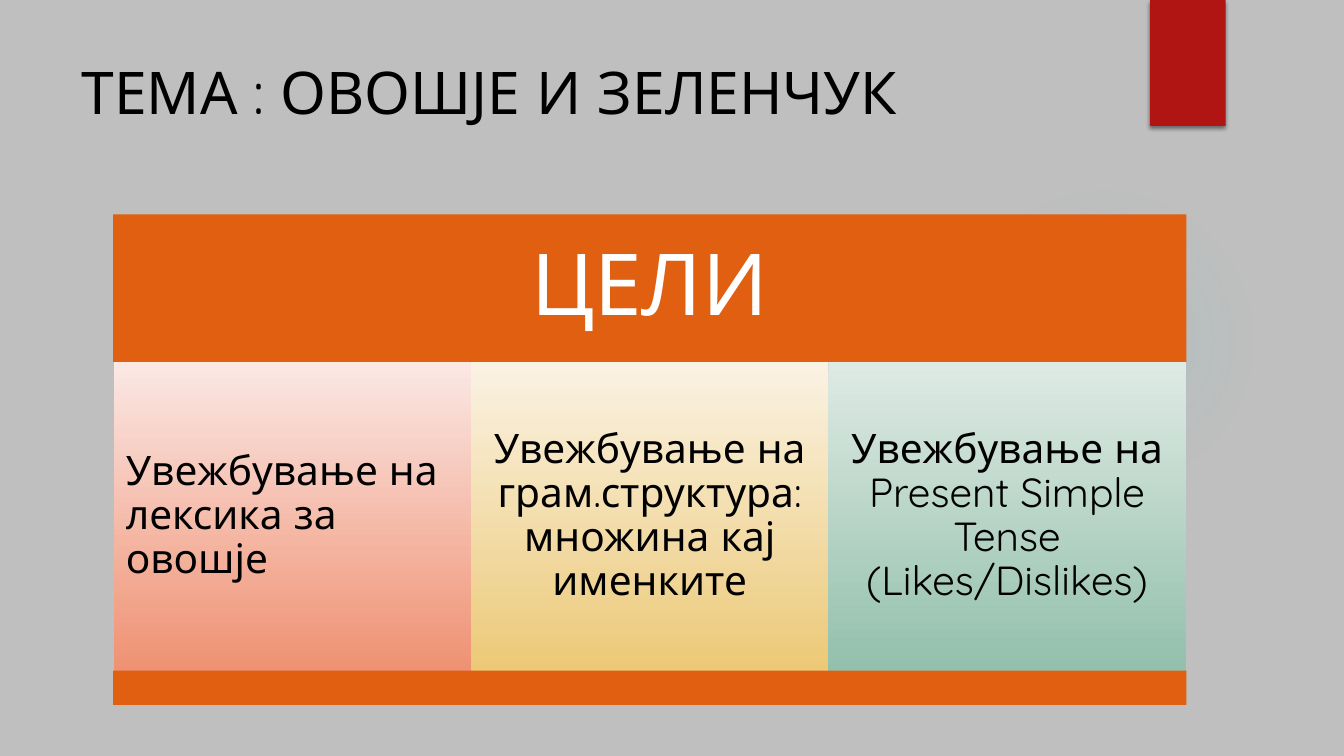
from lxml import etree
from pptx import Presentation
from pptx.dml.color import RGBColor
from pptx.enum.shapes import MSO_SHAPE
from pptx.enum.text import MSO_ANCHOR, MSO_AUTO_SIZE, PP_ALIGN
from pptx.oxml.ns import qn
from pptx.util import Pt

FONT = "Quicksand"
GREY = RGBColor(0xBF, 0xBF, 0xBF)
RED = RGBColor(0xB0, 0x15, 0x13)
ORANGE = RGBColor(0xE0, 0x5F, 0x11)
TEAL = RGBColor(0x50, 0xB9, 0xC1)
BLACK = RGBColor(0, 0, 0)
WHITE = RGBColor(0xFF, 0xFF, 0xFF)
PINK_LIGHT = RGBColor(0xFB, 0xE8, 0xE4)
PINK_DARK = RGBColor(0xEF, 0x91, 0x73)
SAND_LIGHT = RGBColor(0xFA, 0xF2, 0xE3)
SAND_DARK = RGBColor(0xEC, 0xC9, 0x77)
GREEN_LIGHT = RGBColor(0xDE, 0xEA, 0xE4)
GREEN_DARK = RGBColor(0x93, 0xC0, 0xAC)

TABLE_LEFT, TABLE_WIDTH = 80.8, 766.6
COLUMN_LEFT, COLUMN_WIDTH = 81.2, 255.3
HEADER_TOP, HEADER_HEIGHT = 153.2, 105.3
COLUMN_TOP, COLUMN_HEIGHT = 258.5, 220.8
FOOTER_TOP, FOOTER_HEIGHT = 479.1, 24.5

GOALS = [
    ("Увежбување на лексика за овошје", PP_ALIGN.LEFT, PINK_LIGHT, PINK_DARK),
    ("Увежбување на грам.структура: множина кај именките",
     PP_ALIGN.CENTER, SAND_LIGHT, SAND_DARK),
    ("Увежбување на Present Simple Tense (Likes/Dislikes)",
     PP_ALIGN.CENTER, GREEN_LIGHT, GREEN_DARK),
]


def add_plain_shape(slide, kind, left, top, width, height, color):
    shape = slide.shapes.add_shape(kind, Pt(left), Pt(top), Pt(width), Pt(height))
    shape.shadow.inherit = False
    shape.fill.solid()
    shape.fill.fore_color.rgb = color
    shape.line.fill.background()
    return shape


def add_color(parent, color, opacity):
    element = etree.SubElement(parent, qn("a:srgbClr"), val=str(color))
    etree.SubElement(element, qn("a:alpha"), val=str(opacity * 1000))


def add_glow(slide):
    glow = add_plain_shape(slide, MSO_SHAPE.OVAL, 677.5, 131.8, 221.8, 221.8, TEAL)
    solid = glow.element.spPr.find(qn("a:solidFill"))
    gradient = etree.Element(qn("a:gradFill"))
    stops = etree.SubElement(gradient, qn("a:gsLst"))
    for position, opacity in ((0, 7), (36, 6), (69, 0)):
        stop = etree.SubElement(stops, qn("a:gs"), pos=str(position * 1000))
        add_color(stop, TEAL, opacity)
    circle = etree.SubElement(gradient, qn("a:path"), path="circle")
    etree.SubElement(circle, qn("a:fillToRect"),
                     l="50000", t="50000", r="50000", b="50000")
    solid.getparent().replace(solid, gradient)


def add_ribbon(slide):
    ribbon = add_plain_shape(slide, MSO_SHAPE.RECTANGLE, 821.5, 0, 54, 90, RED)
    effects = ribbon.element.spPr.find(qn("a:effectLst"))
    shadow = etree.SubElement(effects, qn("a:outerShdw"), blurRad=str(Pt(3)),
                              dist=str(Pt(2)), dir="5400000", rotWithShape="0")
    add_color(shadow, BLACK, 45)


def format_paragraph(paragraph, size, color, alignment):
    paragraph.alignment = alignment
    for run in paragraph.runs:
        run.font.name = FONT
        run.font.size = Pt(size)
        run.font.color.rgb = color


def fill_text(shape, text, size, color, alignment, margin):
    frame = shape.text_frame
    frame.text = text
    frame.word_wrap = True
    frame.vertical_anchor = MSO_ANCHOR.MIDDLE
    frame.margin_left = frame.margin_right = Pt(margin)
    frame.margin_top = frame.margin_bottom = Pt(margin)
    frame.paragraphs[0].line_spacing = 0.9
    format_paragraph(frame.paragraphs[0], size, color, alignment)


def add_title(slide, text):
    title = slide.shapes.title
    title.left, title.top = Pt(51), Pt(36)
    title.width, title.height = Pt(741), Pt(110)
    frame = title.text_frame
    frame.text = text
    frame.auto_size = MSO_AUTO_SIZE.NONE
    frame.vertical_anchor = MSO_ANCHOR.TOP
    format_paragraph(frame.paragraphs[0], 42, BLACK, PP_ALIGN.LEFT)


def add_band(slide, top, height):
    return add_plain_shape(slide, MSO_SHAPE.RECTANGLE, TABLE_LEFT, top,
                           TABLE_WIDTH, height, ORANGE)


def add_goal(slide, index, text, alignment, light, dark):
    left = COLUMN_LEFT + index * COLUMN_WIDTH
    goal = add_plain_shape(slide, MSO_SHAPE.RECTANGLE, left, COLUMN_TOP,
                           COLUMN_WIDTH, COLUMN_HEIGHT, light)
    goal.fill.gradient()
    goal.fill.gradient_angle = 270
    for stop, color in zip(goal.fill.gradient_stops, (light, dark)):
        stop.color.rgb = color
    fill_text(goal, text, 29, BLACK, alignment, 8.7)


def main():
    presentation = Presentation()
    presentation.slide_width, presentation.slide_height = Pt(960), Pt(540)
    slide = presentation.slides.add_slide(presentation.slide_layouts[5])
    slide.background.fill.solid()
    slide.background.fill.fore_color.rgb = GREY

    add_glow(slide)
    add_ribbon(slide)
    add_title(slide, "ТЕМА : ОВОШЈЕ И ЗЕЛЕНЧУК")
    header = add_band(slide, HEADER_TOP, HEADER_HEIGHT)
    fill_text(header, "ЦЕЛИ", 61, WHITE, PP_ALIGN.CENTER, 18)
    for index, goal in enumerate(GOALS):
        add_goal(slide, index, *goal)
    add_band(slide, FOOTER_TOP, FOOTER_HEIGHT)

    presentation.save("out.pptx")


if __name__ == "__main__":
    main()
